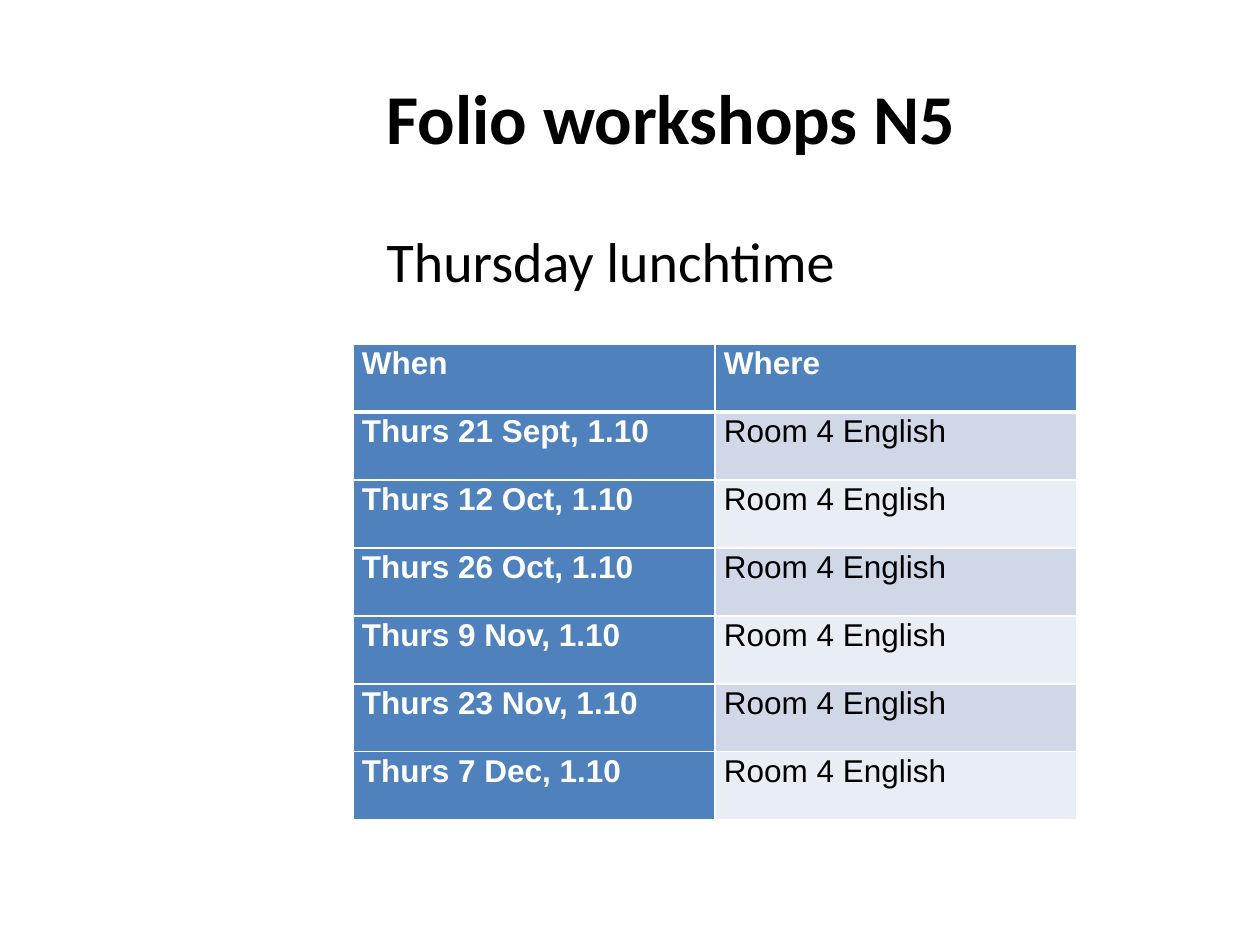
from lxml import etree
from pptx import Presentation
from pptx.dml.color import RGBColor
from pptx.enum.text import MSO_ANCHOR, PP_ALIGN
from pptx.oxml.ns import qn
from pptx.util import Emu, Pt

LEFT, TOP, MIDDLE = PP_ALIGN.LEFT, MSO_ANCHOR.TOP, MSO_ANCHOR.MIDDLE
PX = 914400 // 126

TITLE = "Folio workshops N5"
SUBTITLE = "Thursday lunchtime"
HEADER = ("When", "Where")
DATES = ["21 Sept", "12 Oct", "26 Oct", "9 Nov", "23 Nov", "7 Dec"]
ROWS = [HEADER] + [(f"Thurs {date}, 1.10", "Room 4 English") for date in DATES]

TITLE_BOX = (374, 38, 823, 157)
BODY_BOX = (374, 220, 823, 624)
TABLE_LEFT, TABLE_TOP, COL_W, ROW_H = 353, 344, 362, 68
CELL_INSET = 9

BLACK, WHITE, BLUE = "000000", "FFFFFF", "4F81BD"
BANDS = ("D0D8E8", "E9EDF4")


def px(n):
    return Emu(n * PX)


def rgb(value):
    return RGBColor.from_string(value)


def write(tf, text, size, font="Calibri", color=BLACK, bold=False,
          anchor=TOP, spacing=None):
    tf.word_wrap = True
    tf.vertical_anchor = anchor
    p = tf.paragraphs[0]
    p.alignment = LEFT
    p.space_before = Pt(0)
    if spacing:
        p.line_spacing = spacing
    r = p.add_run()
    r.text = text
    r.font.size = Pt(size)
    r.font.name = font
    r.font.bold = bold
    r.font.color.rgb = rgb(color)
    return p


def place(shape, box):
    shape.left, shape.top, shape.width, shape.height = map(px, box)


def add_borders(cell, **widths):
    tcPr = cell._tc.get_or_add_tcPr()
    for side in "LRTB":
        ln = etree.SubElement(tcPr, qn(f"a:ln{side}"), w=str(Pt(widths.get(side, 1))))
        fill = etree.SubElement(ln, qn("a:solidFill"))
        etree.SubElement(fill, qn("a:srgbClr"), val=WHITE)


def fill_cell(cell, text, row, col):
    strong = row == 0 or col == 0
    cell.margin_left = cell.margin_right = px(CELL_INSET)
    cell.margin_top = cell.margin_bottom = 0
    cell.vertical_anchor = TOP
    add_borders(cell, T=3 if row == 1 else 1, B=3 if row == 0 else 1)
    cell.fill.solid()
    cell.fill.fore_color.rgb = rgb(BLUE if strong else BANDS[(row - 1) % 2])
    write(cell.text_frame, text, 18, font="Arial", bold=strong,
          color=WHITE if strong else BLACK, spacing=1.07)


def main():
    prs = Presentation()
    prs.slide_width, prs.slide_height = px(1260), px(945)
    s = prs.slides.add_slide(prs.slide_layouts[1])

    title, body = s.placeholders
    place(title, TITLE_BOX)
    write(title.text_frame, TITLE, 40, bold=True, anchor=MIDDLE)

    place(body, BODY_BOX)
    pPr = write(body.text_frame, SUBTITLE, 32)._p.get_or_add_pPr()
    pPr.set("marL", "0")
    pPr.set("indent", "0")
    etree.SubElement(pPr, qn("a:buNone"))

    table = s.shapes.add_table(
        len(ROWS), len(HEADER), px(TABLE_LEFT), px(TABLE_TOP),
        px(COL_W * len(HEADER)), px(ROW_H * len(ROWS))).table
    for column in table.columns:
        column.width = px(COL_W)
    for i, values in enumerate(ROWS):
        table.rows[i].height = px(ROW_H)
        for j, text in enumerate(values):
            fill_cell(table.cell(i, j), text, i, j)

    prs.save("out.pptx")


if __name__ == "__main__":
    main()
